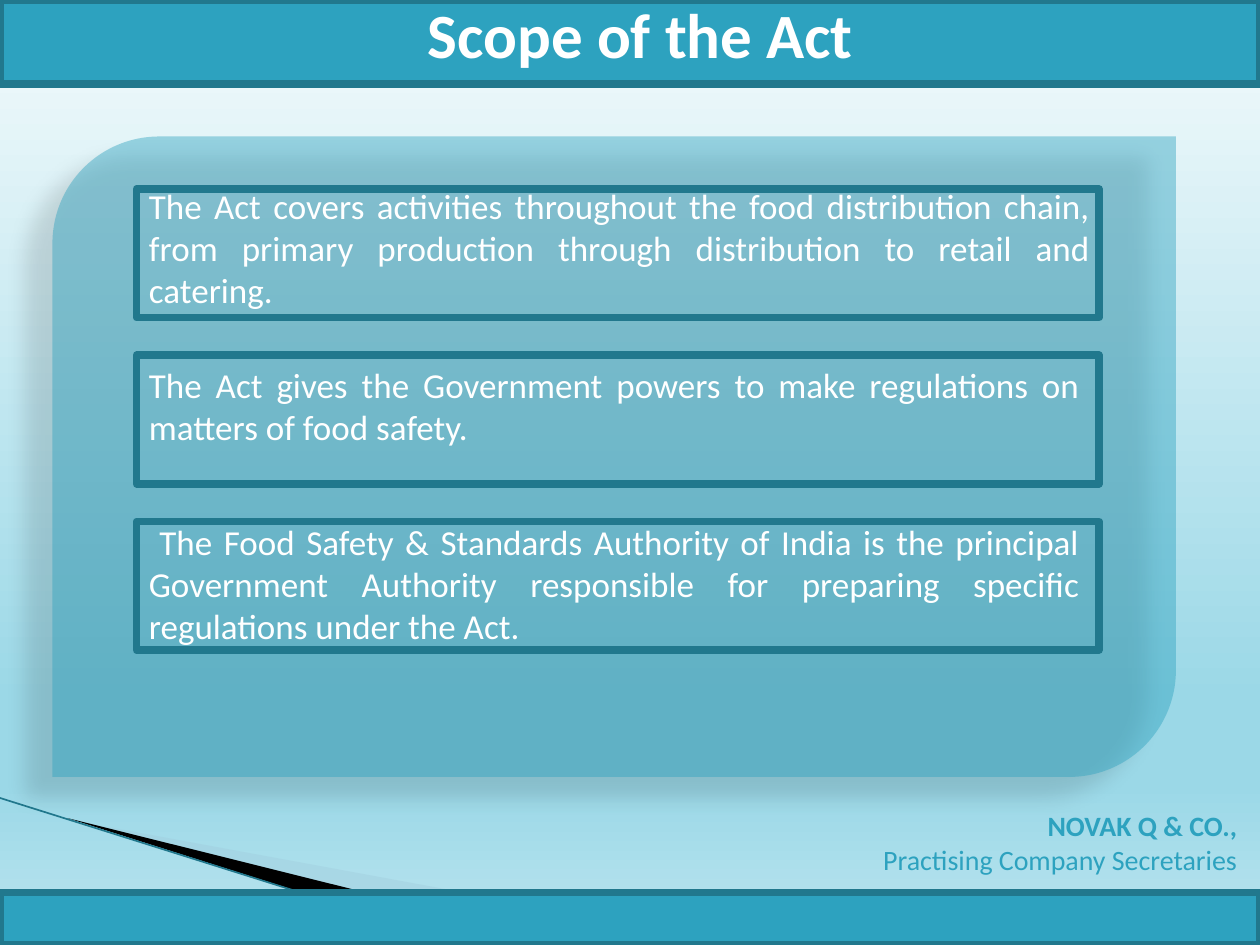
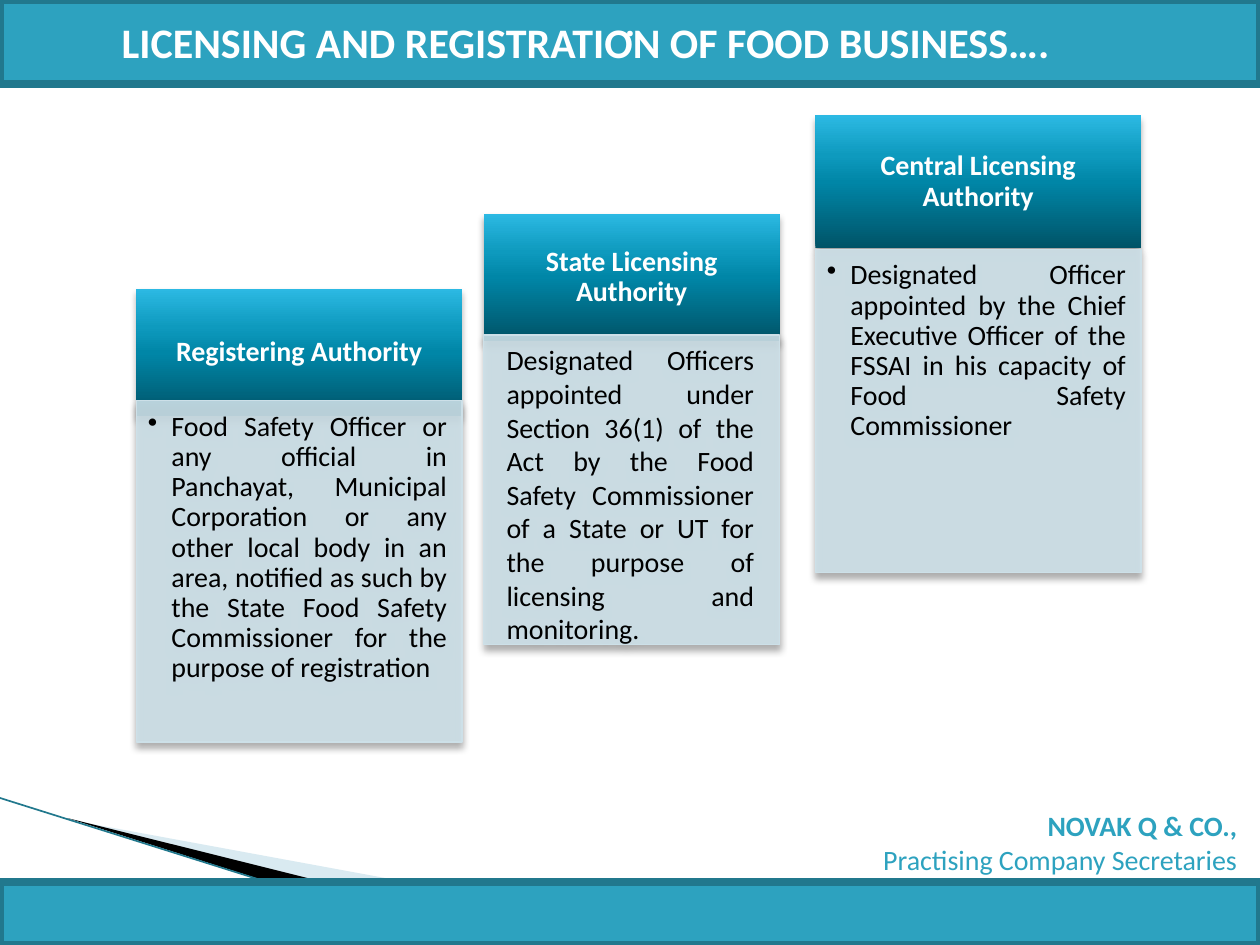
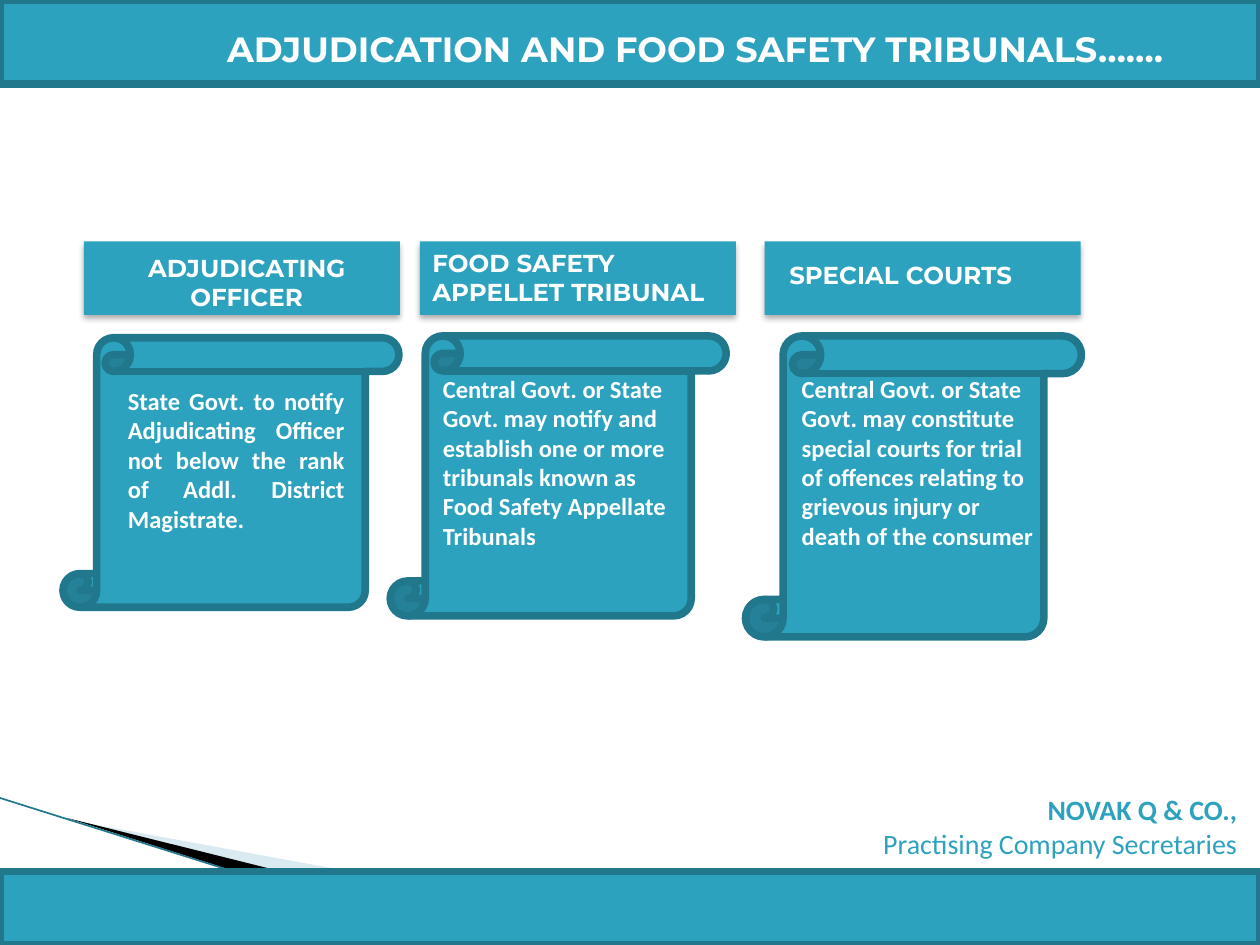
from lxml import etree
from pptx import Presentation
from pptx.dml.color import RGBColor
from pptx.enum.shapes import MSO_CONNECTOR, MSO_SHAPE
from pptx.enum.text import MSO_ANCHOR, PP_ALIGN
from pptx.oxml.ns import qn
from pptx.util import Pt

RECTANGLE, SCROLL = MSO_SHAPE.RECTANGLE, MSO_SHAPE.VERTICAL_SCROLL
DIAGONAL_ROUND = MSO_SHAPE.ROUND_2_DIAG_RECTANGLE
STRAIGHT = MSO_CONNECTOR.STRAIGHT
LEFT, CENTER, RIGHT, JUSTIFY = PP_ALIGN.LEFT, PP_ALIGN.CENTER, PP_ALIGN.RIGHT, PP_ALIGN.JUSTIFY
TOP, MIDDLE, BOTTOM = MSO_ANCHOR.TOP, MSO_ANCHOR.MIDDLE, MSO_ANCHOR.BOTTOM

WIDTH, HEIGHT = 720, 540
TEAL, DARK_TEAL, WHITE, BLACK = "2DA2BF", "21788D", "FFFFFF", "000000"
PALE_BLUE, PANEL_BLUE = "A0CBDC", "CDE0E8"
BORDER = 4.33
BODY_FONT, HEADING_FONT, MONO_FONT = "Calibri", "Montserrat", "Noto Sans Mono"
DEFAULT_INSETS = (7.2, 3.6, 7.2, 3.6)

SKY = [(0, "F4FBFC"), (74, "9BD8E7"), (83, "9BD8E7"), (100, "BCE5EF")]
DEEP_TEAL = [(0, "005367"), (50, "0086A7"), (70, "0E9ABE"), (100, "2CB9E3")]

# opacity %, blur, distance, direction
PANEL_SHADOW = (28, 11.8, 19.7, 141)
CARD_SHADOW = (35, 4, 3, 90)
HEADING_SHADOW = (32, 3.5, 2.2, 90)

FIRM = [("NOVAK Q & CO.,", True), ("Practising Company Secretaries", False)]

# text, text top, text width, first line indent
SCOPE = [
    ("The Act covers activities throughout the food distribution chain, from primary "
     "production through distribution to retail and catering.", 102, 552, 0),
    ("The Act gives the Government powers to make regulations on matters of food safety.",
     204, 546, 0),
    ("The Food Safety & Standards Authority of India is the principal Government Authority "
     "responsible for preparing specific regulations under the Act.", 294, 546, 6),
]

# heading, duty, bulleted, left, top, width, heading height, duty top, duty height
AUTHORITIES = [
    ("Registering Authority",
     "Food Safety Officer or any official in Panchayat, Municipal Corporation or any other "
     "local body in an area, notified as such by the State Food Safety Commissioner for the "
     "purpose of registration", True, 78, 165, 186, 73, 229, 195),
    ("State Licensing Authority",
     "Designated Officers appointed under Section 36(1) of the Act by the Food Safety "
     "Commissioner of a State or UT for the purpose of licensing and monitoring.",
     False, 276.5, 122, 169, 73, 191.5, 177),
    ("Central Licensing Authority",
     "Designated Officer appointed by the Chief Executive Officer of the FSSAI in his "
     "capacity of Food Safety Commissioner", True, 466, 66, 186, 76, 142.5, 184.5),
]

# heading (text, box left, text left, text top, alignment),
# duty (text, text left, text top, text width, alignment), scroll (left, top, height)
TRIBUNALS = [
    (("ADJUDICATING OFFICER", 48, 48, 141, CENTER),
     ("State Govt. to notify Adjudicating Officer not below the rank of Addl. District "
      "Magistrate.", 66, 217, 138, JUSTIFY), (36, 193, 154)),
    (("FOOD SAFETY APPELLET TRIBUNAL", 240, 240, 138, LEFT),
     ("Central Govt. or State Govt. may notify and establish one or more tribunals known as "
      "Food Safety Appellate Tribunals", 246, 210, 144, LEFT), (223, 192, 160)),
    (("SPECIAL COURTS", 437, 444, 145, LEFT),
     ("Central Govt. or State Govt. may constitute special courts for trial of offences "
      "relating to grievous injury or death of the consumer", 451, 210, 151, LEFT),
     (426, 192, 172)),
]


def rgb(color):
    return RGBColor.from_string(color)


def set_gradient(fill, owner, stops, angle):
    """Fill with any number of stops; angle is counter-clockwise degrees."""
    fill.gradient()
    fill.gradient_angle = angle
    stop_list = owner.find(".//" + qn("a:gsLst"))
    for stop in list(stop_list):
        stop_list.remove(stop)
    for position, color in stops:
        stop = etree.SubElement(stop_list, qn("a:gs"), pos=str(position * 1000))
        etree.SubElement(stop, qn("a:srgbClr"), val=color)


def set_opacity(color_element, percent):
    etree.SubElement(color_element, qn("a:alpha"), val=str(percent * 1000))


def set_shadow(shape, opacity, blur, distance, direction):
    effects = shape.element.spPr.find(qn("a:effectLst"))
    shadow = etree.SubElement(effects, qn("a:outerShdw"), blurRad=str(Pt(blur)),
                              dist=str(Pt(distance)), dir=str(direction * 60000),
                              algn="ctr", rotWithShape="0")
    set_opacity(etree.SubElement(shadow, qn("a:srgbClr"), val=BLACK), opacity)


def style(shape, fill=None, line=None, line_width=BORDER, opacity=100, shadow=None):
    shape.shadow.inherit = False
    if fill:
        shape.fill.solid()
        shape.fill.fore_color.rgb = rgb(fill)
        if opacity < 100:
            set_opacity(shape.element.spPr.find(qn("a:solidFill"))[0], opacity)
    else:
        shape.fill.background()
    if line:
        shape.line.color.rgb = rgb(line)
        shape.line.width = Pt(line_width)
    else:
        shape.line.fill.background()
    if shadow:
        set_shadow(shape, *shadow)


def add_box(slide, kind, left, top, width, height, **look):
    shape = slide.shapes.add_shape(kind, Pt(left), Pt(top), Pt(width), Pt(height))
    style(shape, **look)
    return shape


def write(shape, lines, size, color=WHITE, font=BODY_FONT, align=LEFT, anchor=TOP,
          insets=DEFAULT_INSETS, spacing=None, indent=0, bulleted=False):
    """Put (text, bold) lines into a shape, one paragraph each."""
    frame = shape.text_frame
    frame.word_wrap = True
    frame.vertical_anchor = anchor
    frame.margin_left, frame.margin_top, frame.margin_right, frame.margin_bottom = map(Pt, insets)
    for number, (text, bold) in enumerate(lines):
        paragraph = frame.add_paragraph() if number else frame.paragraphs[0]
        paragraph.alignment = align
        properties = paragraph._p.get_or_add_pPr()
        if indent:
            properties.set("indent", str(Pt(indent)))
        if bulleted:
            properties.set("marL", str(Pt(-indent)))
            etree.SubElement(properties, qn("a:buChar"), char="•")
        if spacing:
            paragraph.line_spacing = spacing
        run = paragraph.add_run()
        run.text = text
        run.font.size, run.font.bold, run.font.name = Pt(size), bold, font
        run.font.color.rgb = rgb(color)


def add_text(slide, left, top, width, height, lines, size, **options):
    box = slide.shapes.add_textbox(Pt(left), Pt(top), Pt(width), Pt(height))
    write(box, lines, size, **options)


def add_wedge(slide, points, fill, opacity=100):
    corners = [(Pt(x), Pt(y)) for x, y in points]
    builder = slide.shapes.build_freeform(*corners[0], scale=1.0)
    builder.add_line_segments(corners[1:], close=True)
    style(builder.convert_to_shape(), fill=fill, opacity=opacity)


def add_band(slide, top, height):
    return add_box(slide, RECTANGLE, 0, top, WIDTH, height, fill=TEAL, line=DARK_TEAL)


def add_base(presentation, footer_top, firm_bottom=504, sky=False):
    """Add a slide with corner wedges, both bands and the firm's name; return it and the top band."""
    slide = presentation.slides.add_slide(presentation.slide_layouts[6])
    background = slide.background.fill
    if sky:
        set_gradient(background, slide.element, SKY, 270)
    else:
        background.solid()
        background.fore_color.rgb = rgb(WHITE)
    add_wedge(slide, [(39.5, 468.5), (428, HEIGHT), (328, HEIGHT)], PALE_BLUE, 40)
    add_wedge(slide, [(38.5, 467.5), (329, HEIGHT), (267, HEIGHT)], BLACK)
    edge = slide.shapes.add_connector(STRAIGHT, 0, Pt(456), Pt(267), Pt(HEIGHT))
    edge.line.color.rgb = rgb(DARK_TEAL)
    edge.line.width = Pt(0.95)
    etree.SubElement(edge.element.spPr, qn("a:effectLst"))
    top_band = add_band(slide, 0, 48)
    add_band(slide, footer_top, HEIGHT - footer_top)
    add_text(slide, 474, firm_bottom - 66, 240, 66, FIRM, 16, color=TEAL,
             align=RIGHT, anchor=BOTTOM)
    return slide, top_band


def build_scope(presentation):
    slide, _ = add_base(presentation, 510, sky=True)
    add_text(slide, 156, -6, 420, 51, [("Scope of the Act", True)], 36, align=CENTER)
    add_box(slide, DIAGONAL_ROUND, 30, 78, 642, 366, fill=TEAL, opacity=43, shadow=PANEL_SHADOW)
    for number, (text, text_top, text_width, indent) in enumerate(SCOPE):
        add_box(slide, RECTANGLE, 78, 108 + number * 95, 550, 73.5, line=DARK_TEAL)
        add_text(slide, 78, text_top, text_width, 80, [(text, False)], 20,
                 align=JUSTIFY, indent=indent)


def build_licensing(presentation):
    slide, top_band = add_base(presentation, 504)
    write(top_band, [(".", True)], 18, font=MONO_FONT, align=CENTER, anchor=MIDDLE,
          insets=(7.2, 0, 7.2, 21))
    add_text(slide, 62.5, 6, 628, 40,
             [("LICENSING AND REGISTRATION OF FOOD BUSINESS….", True)], 24)
    for (heading, duty, bulleted, left, top, width, heading_height,
         duty_top, duty_height) in AUTHORITIES:
        card = add_box(slide, RECTANGLE, left, top, width, heading_height, shadow=CARD_SHADOW)
        set_gradient(card.fill, card.element, DEEP_TEAL, 90)
        write(card, [(heading, True)], 16, align=CENTER, anchor=MIDDLE,
              insets=(8.5, 5, 8.5, 5), spacing=0.9)
        panel = add_box(slide, RECTANGLE, left, duty_top, width, duty_height, fill=PANEL_BLUE,
                        line=PANEL_BLUE, line_width=0.75, opacity=90, shadow=CARD_SHADOW)
        if bulleted:
            layout = dict(insets=(6.5, 6.5, 8.5, 10), spacing=0.9, indent=-13.5, bulleted=True)
        else:
            layout = dict(insets=(13, 4.5, 14.5, 0))
        write(panel, [(duty, False)], 16, color=BLACK, align=JUSTIFY, **layout)


def build_tribunals(presentation):
    slide, _ = add_base(presentation, 498, firm_bottom=495)
    add_text(slide, 84, 12, 588, 32,
             [("ADJUDICATION AND FOOD SAFETY TRIBUNALS…….", True)], 20,
             font=HEADING_FONT, align=RIGHT)
    for heading, duty, (scroll_left, scroll_top, scroll_height) in TRIBUNALS:
        text, box_left, left, top, align = heading
        add_box(slide, RECTANGLE, box_left, 138, 180.5, 42, fill=TEAL, shadow=HEADING_SHADOW)
        add_text(slide, left, top, 186, 42, [(text, True)], 14, font=HEADING_FONT, align=align)
        add_box(slide, SCROLL, scroll_left, scroll_top, 192, scroll_height,
                fill=TEAL, line=DARK_TEAL)
        text, left, top, width, align = duty
        add_text(slide, left, top, width, 110, [(text, True)], 14, align=align)


def main():
    presentation = Presentation()
    presentation.slide_width, presentation.slide_height = Pt(WIDTH), Pt(HEIGHT)
    build_scope(presentation)
    build_licensing(presentation)
    build_tribunals(presentation)
    presentation.save("out.pptx")


if __name__ == "__main__":
    main()
